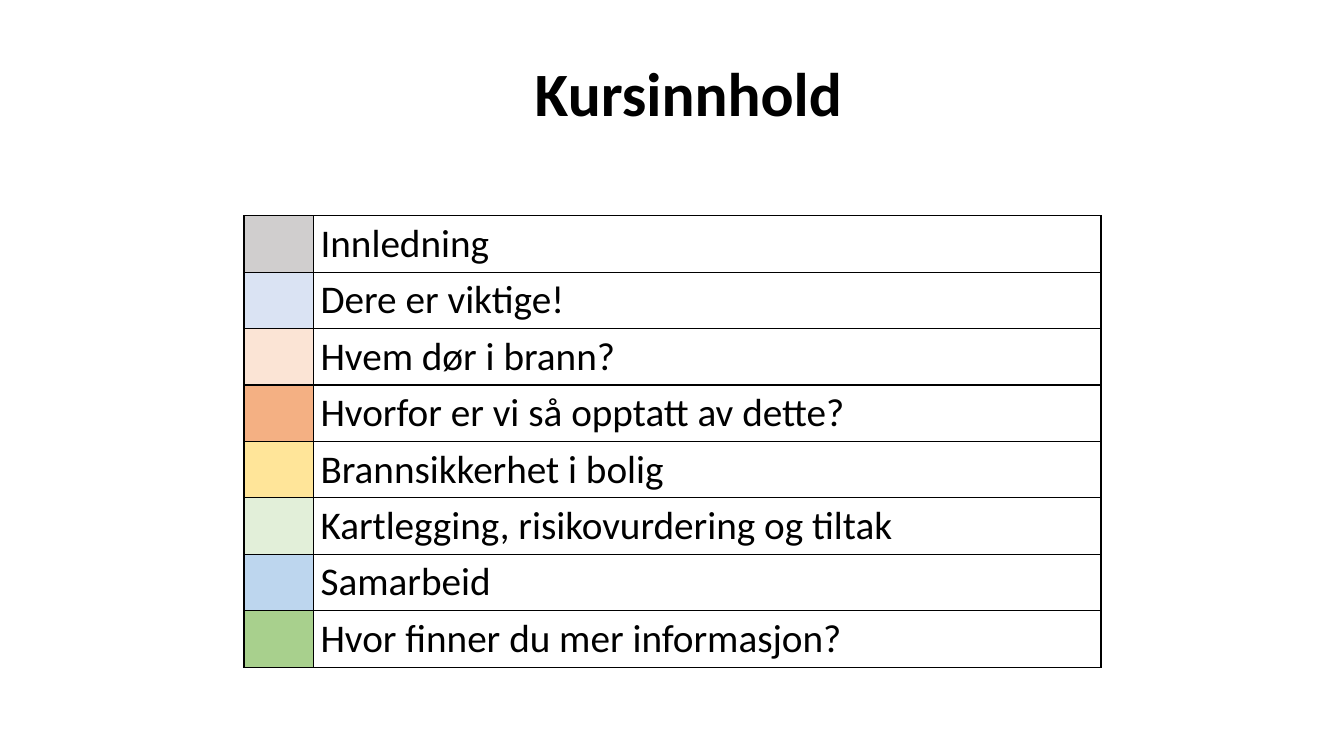
from dataclasses import dataclass

from lxml import etree
from pptx import Presentation
from pptx.dml.color import RGBColor
from pptx.enum.text import MSO_ANCHOR, PP_ALIGN
from pptx.oxml.ns import qn
from pptx.slide import Slide
from pptx.table import _Cell
from pptx.text.text import _Paragraph
from pptx.util import Emu, Pt

CENTER = PP_ALIGN.CENTER
MIDDLE = MSO_ANCHOR.MIDDLE
TOP = MSO_ANCHOR.TOP
EMU_PER_PX = 9144
FONT = "Calibri"
BLACK = "000000"
SWATCH_WIDTH = 69
TOPIC_WIDTH = 781
ROW_HEIGHT = 56


@dataclass(frozen=True)
class Topic:
    name: str
    color: str


TOPICS = [
    Topic("Innledning", "D0CECE"),
    Topic("Dere er viktige!", "DAE3F3"),
    Topic("Hvem dør i brann?", "FBE4D5"),
    Topic("Hvorfor er vi så opptatt av dette?", "F4B083"),
    Topic("Brannsikkerhet i bolig", "FFE599"),
    Topic("Kartlegging, risikovurdering og tiltak", "E2EFD9"),
    Topic("Samarbeid", "BDD6EE"),
    Topic("Hvor finner du mer informasjon?", "A8D08D"),
]


def px(length: int) -> Emu:
    return Emu(length * EMU_PER_PX)


def rgb(color: str) -> RGBColor:
    return RGBColor.from_string(color)


def add_run(paragraph: _Paragraph, text: str, size: int, bold: bool = False) -> None:
    run = paragraph.add_run()
    run.text = text
    run.font.name = FONT
    run.font.size = Pt(size)
    run.font.bold = bold
    run.font.color.rgb = rgb(BLACK)


def draw_borders(cell: _Cell) -> None:
    properties = cell._tc.get_or_add_tcPr()
    for position, side in enumerate(("a:lnL", "a:lnR", "a:lnT", "a:lnB")):
        border = etree.Element(qn(side), w=str(Pt(1)))
        fill = etree.SubElement(border, qn("a:solidFill"))
        etree.SubElement(fill, qn("a:srgbClr"), val=BLACK)
        properties.insert(position, border)


def draw_title(slide: Slide) -> None:
    title = slide.shapes.add_textbox(px(108), px(23), px(1150), px(145)).text_frame
    title.word_wrap = True
    title.vertical_anchor = MIDDLE
    heading = title.paragraphs[0]
    heading.alignment = CENTER
    heading.line_spacing = 0.9
    add_run(heading, "Kursinnhold", 44, bold=True)


def draw_topic(swatch: _Cell, label: _Cell, topic: Topic) -> None:
    swatch.fill.solid()
    swatch.fill.fore_color.rgb = rgb(topic.color)
    label.fill.background()
    label.vertical_anchor = TOP
    label.margin_left = label.margin_right = px(7)
    label.margin_top = px(1)
    label.margin_bottom = px(0)
    paragraph = label.text_frame.paragraphs[0]
    paragraph.line_spacing = 1.07
    paragraph.space_after = Pt(8)
    add_run(paragraph, topic.name, 28)
    for cell in (swatch, label):
        draw_borders(cell)


def draw_contents(slide: Slide) -> None:
    contents = slide.shapes.add_table(
        len(TOPICS), 2, px(242), px(214),
        px(SWATCH_WIDTH + TOPIC_WIDTH), px(ROW_HEIGHT * len(TOPICS)),
    ).table
    contents.first_row = False
    contents.horz_banding = False
    for column, width in zip(contents.columns, (SWATCH_WIDTH, TOPIC_WIDTH)):
        column.width = px(width)
    for row, topic in zip(contents.rows, TOPICS):
        row.height = px(ROW_HEIGHT)
        draw_topic(row.cells[0], row.cells[1], topic)


def main() -> None:
    presentation = Presentation()
    presentation.slide_width = px(1333)
    presentation.slide_height = px(750)
    slide = presentation.slides.add_slide(presentation.slide_layouts[6])
    draw_title(slide)
    draw_contents(slide)
    presentation.save("out.pptx")


if __name__ == "__main__":
    main()
